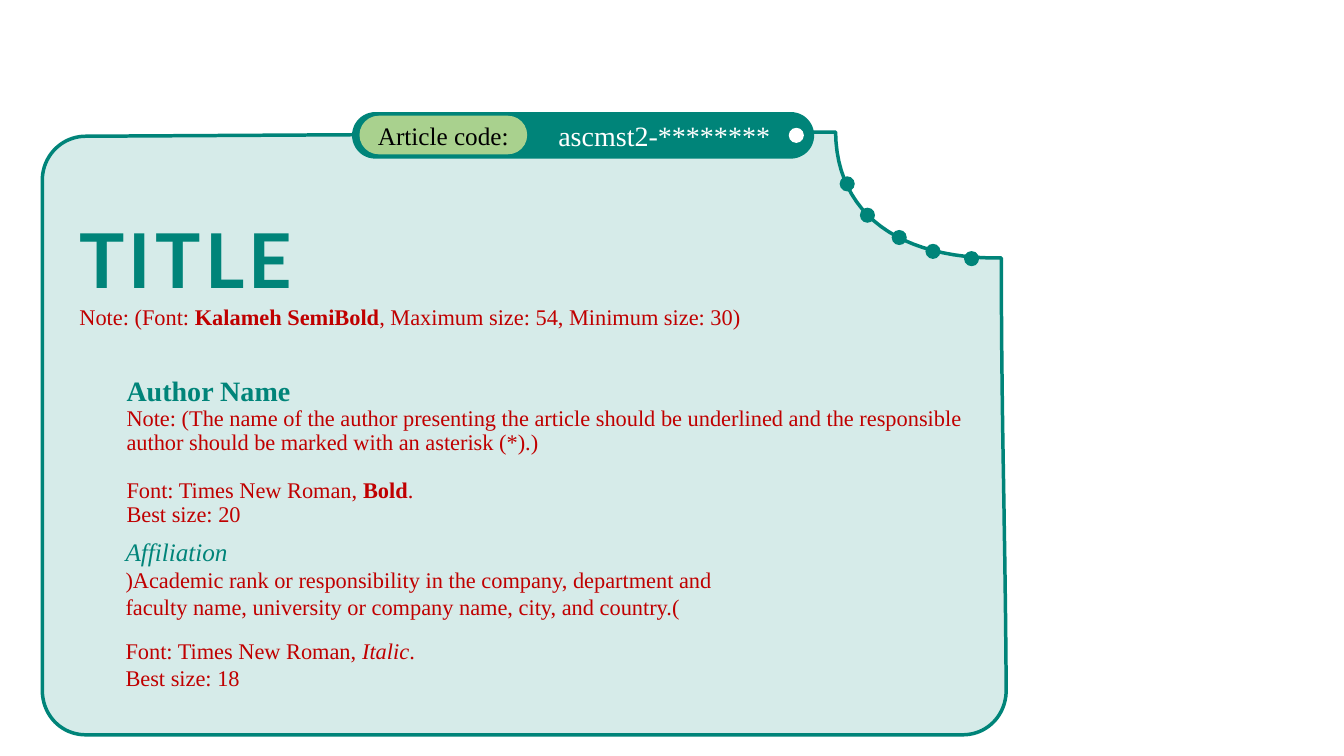
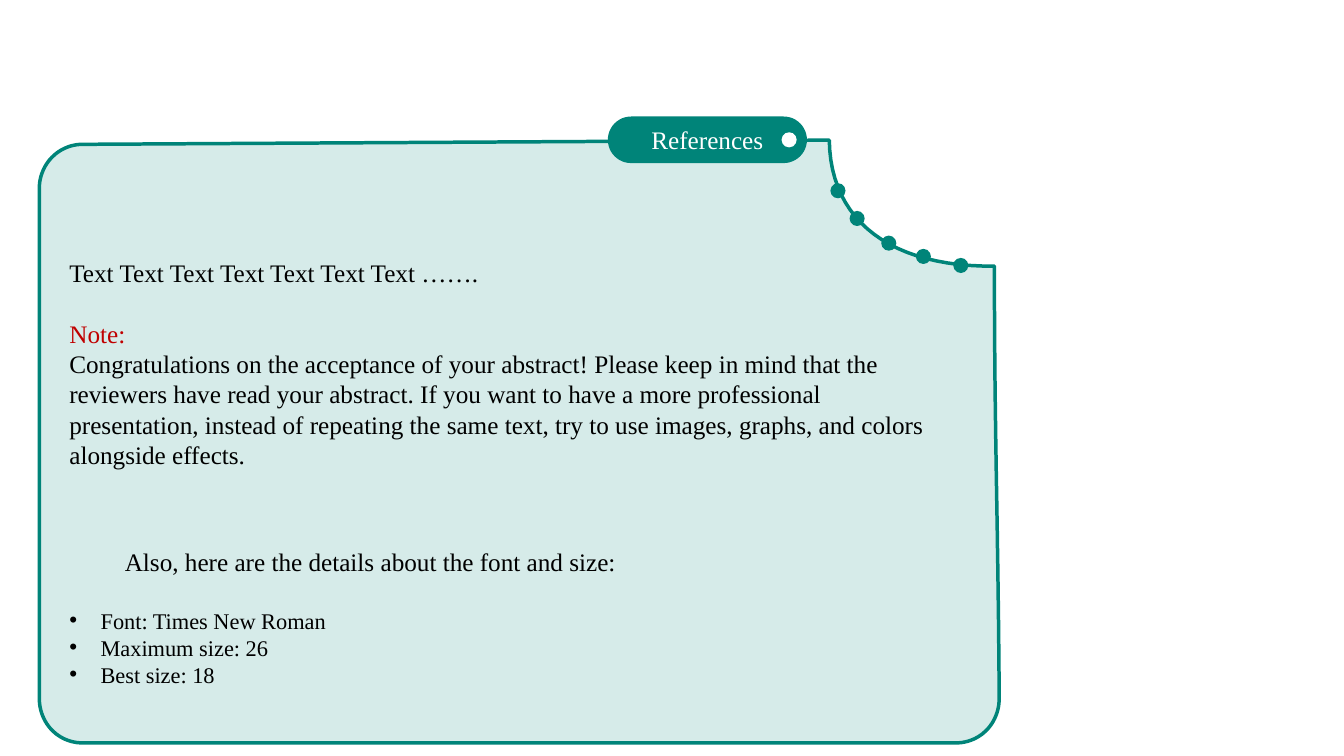
from collections import namedtuple

from lxml.etree import SubElement
from pptx import Presentation
from pptx.dml.color import RGBColor
from pptx.enum.shapes import MSO_SHAPE
from pptx.enum.text import MSO_ANCHOR, MSO_AUTO_SIZE, PP_ALIGN
from pptx.oxml.ns import qn
from pptx.util import Emu, Inches, Pt

# Shared look
TEAL, LEAF, RED = "008479", "A9D18E", "C00000"
BLACK, WHITE = "000000", "FFFFFF"
SERIF, DISPLAY = "Times New Roman", "Lato"
CARD_ALPHA = 16
DOT = Inches(0.15)
TITLE_ONLY = 5

# Card outline in percent of its box: one point is a line, three are a curve
OUTLINE_START = (99.5, 20.9)
OUTLINE = [
    [(99.5, 48.8), (99.9, 64.5), (100, 92.6)],
    [(100, 96.8), (98, 100), (95.5, 100)],
    [(4.5, 100)],
    [(2, 100), (0, 96.8), (0, 92.6)],
    [(0, 8)],
    [(0, 4), (2, 0.7), (4.5, 0.7)],
    [(82.3, 0)],
    [(82.4, 13.7), (89, 21.1), (99.5, 20.9)],
]
CURVE_STEPS = 24

Box = namedtuple("Box", "left top width height")


def color(hex_value):
    return RGBColor.from_string(hex_value)


def point(box, x, y):
    """Slide position of a point given in percent of a box."""
    return (Emu(round(box.left + box.width * x / 100)),
            Emu(round(box.top + box.height * y / 100)))


def inside(box, left, top, width, height):
    """Box given in percent of another box."""
    return Box(*point(box, left, top),
               Emu(round(box.width * width / 100)),
               Emu(round(box.height * height / 100)))


def paint(shape, fill, line=None, weight=1):
    shape.shadow.inherit = False
    shape.fill.solid()
    shape.fill.fore_color.rgb = color(fill)
    if line:
        shape.line.color.rgb = color(line)
        shape.line.width = Pt(weight)
    else:
        shape.line.fill.background()


# Text
def style(size, hex_value, name=SERIF, **extra):
    return dict(size=Pt(size), color=hex_value, name=name, **extra)


def para(*runs, leading=None, before=0, align=PP_ALIGN.LEFT, indent=0, bullet=None):
    """Runs are (text, style) pairs; leading and before are points."""
    return dict(runs=runs, indent=indent, bullet=bullet,
                format=dict(line_spacing=Pt(leading) if leading else 1.0,
                            space_before=Pt(before), space_after=Pt(0),
                            alignment=align))


def add_run(paragraph, text, look):
    run = paragraph.add_run()
    run.text = text
    for key, value in look.items():
        if key == "color":
            run.font.color.rgb = color(value)
        elif key == "spacing":
            run.font._element.set("spc", str(value * 100))
        else:
            setattr(run.font, key, value)


def write(shape, paragraphs, anchor=MSO_ANCHOR.TOP):
    frame = shape.text_frame
    frame.word_wrap = True
    frame.auto_size = MSO_AUTO_SIZE.NONE
    frame.vertical_anchor = anchor
    for side in ("left", "right"):
        setattr(frame, f"margin_{side}", Inches(0.1))
    for side in ("top", "bottom"):
        setattr(frame, f"margin_{side}", Inches(0.05))
    for number, content in enumerate(paragraphs):
        paragraph = frame.add_paragraph() if number else frame.paragraphs[0]
        for key, value in content["format"].items():
            setattr(paragraph, key, value)
        properties = paragraph._p.get_or_add_pPr()
        indent = Inches(content["indent"])
        properties.set("marL", str(indent))
        properties.set("indent", str(-indent if content["bullet"] else 0))
        if content["bullet"]:
            SubElement(properties, qn("a:buFont")).set("typeface", "Arial")
            SubElement(properties, qn("a:buChar")).set("char", content["bullet"])
        for text, look in content["runs"]:
            add_run(paragraph, text, look)


def add_text(slide, box, paragraphs, anchor=MSO_ANCHOR.TOP):
    write(slide.shapes.add_textbox(*box), paragraphs, anchor)


def place_title(slide, box, paragraphs, anchor=MSO_ANCHOR.TOP):
    title = slide.shapes.title
    for side, length in box._asdict().items():
        setattr(title, side, length)
    write(title, paragraphs, anchor)
    slide.shapes._spTree.append(title._element)  # in front of the card


# Card, tab and dots
def curve(start, first, second, end):
    for step in range(1, CURVE_STEPS + 1):
        t = step / CURVE_STEPS
        u = 1 - t
        yield tuple(u**3 * a + 3 * u * u * t * b + 3 * u * t * t * c + t**3 * d
                    for a, b, c, d in zip(start, first, second, end))


def add_dot(slide, x, y, fill):
    dot = slide.shapes.add_shape(MSO_SHAPE.OVAL, x - DOT // 2, y - DOT // 2, DOT, DOT)
    paint(dot, fill)


def add_pill(slide, box, fill, line=None):
    pill = slide.shapes.add_shape(MSO_SHAPE.ROUNDED_RECTANGLE, *box)
    pill.adjustments[0] = 0.5
    paint(pill, fill, line)
    return pill


def add_card(slide, box, dots):
    corners, last = [], OUTLINE_START
    for segment in OUTLINE:
        corners += segment if len(segment) == 1 else curve(last, *segment)
        last = segment[-1]
    builder = slide.shapes.build_freeform(*point(box, *OUTLINE_START), scale=1.0)
    builder.add_line_segments([point(box, *corner) for corner in corners], close=True)
    card = builder.convert_to_shape()
    paint(card, TEAL, TEAL, 2.5)
    tint = card._element.spPr.find(qn("a:solidFill"))[0]
    SubElement(tint, qn("a:alpha")).set("val", str(CARD_ALPHA * 1000))
    for dot in dots:
        add_dot(slide, *point(box, *dot), TEAL)


def add_tab(slide, box):
    add_pill(slide, box, TEAL, TEAL)
    add_dot(slide, box.left + box.width - Inches(0.17),
            box.top + box.height // 2, WHITE)


# Slides
def build_cover(slide, card):
    note = style(16, RED, bold=False, italic=False)
    strong = {**note, "bold": True}
    slanted = {**note, "italic": True}
    add_card(slide, card, [(83.5, 8.6), (85.6, 13.8), (88.9, 17.5),
                           (92.4, 19.8), (96.4, 21)])

    # Article code
    add_tab(slide, inside(card, 32.2, -3.2, 47.8, 7.5))
    label = add_pill(slide, inside(card, 32.9, -2.7, 17.4, 6.4), LEAF)
    write(label, [para(("Article code:", style(18, BLACK)), align=PP_ALIGN.CENTER)],
          MSO_ANCHOR.MIDDLE)
    add_text(slide, inside(card, 52.5, -3, 25.4, 7.4),
             [para(("ascmst2-********", style(20, WHITE)), leading=24)])

    # Article title
    place_title(slide, inside(card, 2.8, 12.5, 78.6, 21.4), [
        para(("TITLE", style(54, TEAL, DISPLAY, bold=True, spacing=3))),
        para(("Note: (Font: ", note), ("Kalameh SemiBold", strong),
             (", Maximum size: 54, Minimum size: 30)", note), leading=19.2),
    ])

    # Author
    add_text(slide, inside(card, 7.7, 39.6, 92.3, 26.8), [
        para(("Author Name", style(20, TEAL, bold=True)), leading=21.6),
        para(("Note: (The name of the author presenting the article should be "
              "underlined and the responsible author should be marked with an "
              "asterisk (*).)", note), leading=17.2),
        para(("Font: Times New Roman, ", note), ("Bold", strong), (".", note),
             leading=17.2, before=17.2),
        para(("Best size: 20", note), leading=17.2),
    ], MSO_ANCHOR.BOTTOM)

    # Affiliation
    add_text(slide, inside(card, 7.6, 66.2, 69, 32.4), [
        para(("Affiliation", style(18, TEAL, italic=True)), leading=21.6),
        para((")Academic rank or responsibility in the company, department and "
              "faculty name, university or company name, city, and country.(", note),
             leading=19.2),
        para(("Font: Times New Roman, ", note), ("Italic", slanted), (".", note),
             leading=19.2, before=12),
        para(("Best size: 18", note), leading=19.2),
    ])


def build_references(slide, card):
    plain = style(18, BLACK)
    add_card(slide, card, [(83.2, 8.4), (85.2, 13), (88.5, 17.1),
                           (92.1, 19.3), (96, 20.8)])

    # Heading on the tab
    tab = inside(card, 59.3, -3.8, 20.6, 7.5)
    add_tab(slide, tab)
    place_title(slide, tab,
                [para(("References", style(18, WHITE)), align=PP_ALIGN.CENTER)],
                MSO_ANCHOR.MIDDLE)

    # Body and font details
    details = ["Font: Times New Roman", "Maximum size: 26", "Best size: 18"]
    add_text(slide, inside(card, 2.1, 18.7, 93.1, 73.7), [
        para(("Text Text Text Text Text Text Text …….", plain),
             leading=21.6, align=PP_ALIGN.JUSTIFY),
        para(("Note:", style(18, RED)), leading=21.6, before=21.6),
        para(("Congratulations on the acceptance of your abstract! Please keep in "
              "mind that the reviewers have read your abstract. If you want to have "
              "a more professional presentation, instead of repeating the same text, "
              "try to use images, graphs, and colors alongside effects.", plain),
             leading=21.6),
        para(("Also, here are the details about the font and size:", plain),
             leading=21.6, before=55, indent=0.55),
    ] + [
        para((detail, style(16, BLACK)), leading=19.2, indent=0.31, bullet="•",
             before=0 if number else 21.6)
        for number, detail in enumerate(details)
    ])


def main():
    deck = Presentation()
    deck.slide_width, deck.slide_height = Inches(13.33), Inches(7.5)
    pages = [(build_cover, (0.42, 1.31, 9.56, 5.98)),
             (build_references, (0.39, 1.39, 9.52, 5.98))]
    for build, card in pages:
        slide = deck.slides.add_slide(deck.slide_layouts[TITLE_ONLY])
        build(slide, Box(*map(Inches, card)))
    deck.save("out.pptx")


if __name__ == "__main__":
    main()
